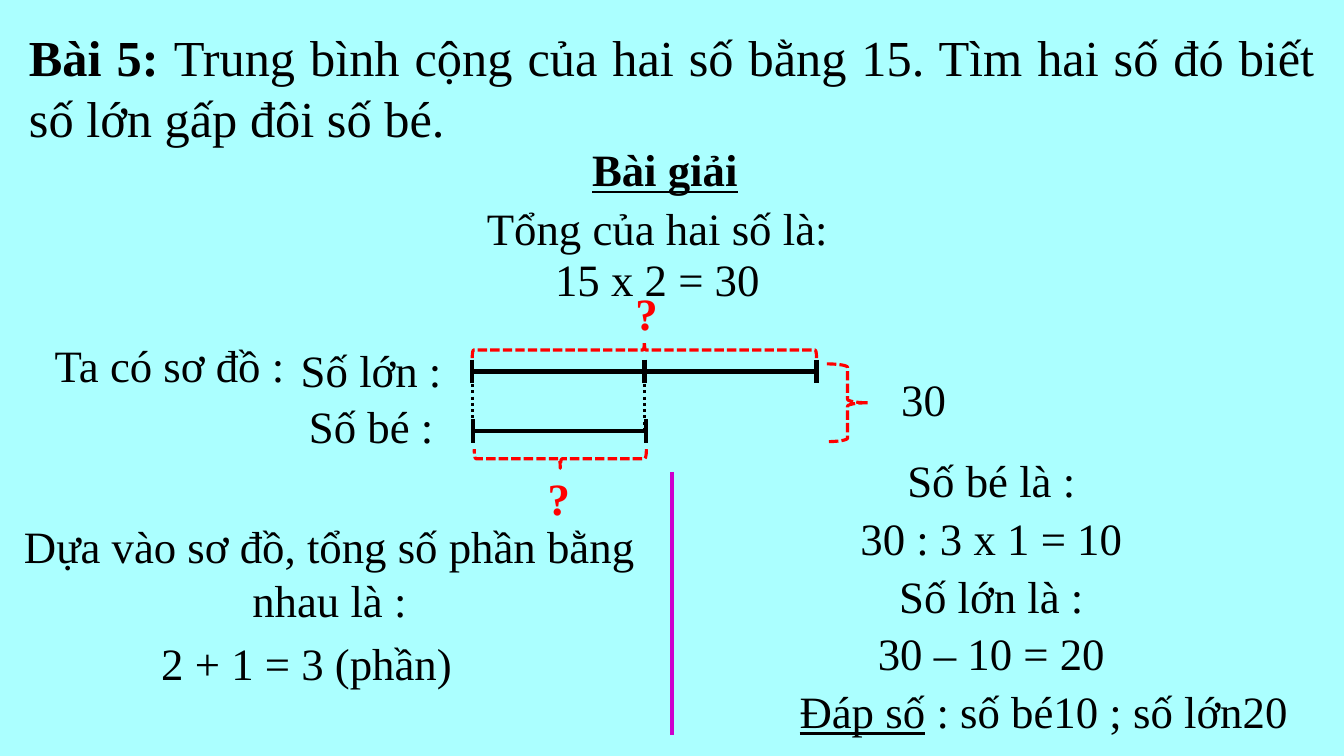
from lxml.etree import SubElement
from pptx import Presentation
from pptx.dml.color import RGBColor
from pptx.enum.dml import MSO_LINE_DASH_STYLE as Dash
from pptx.enum.shapes import MSO_CONNECTOR as Connector, MSO_SHAPE as Shape
from pptx.enum.text import MSO_ANCHOR as Anchor, PP_ALIGN as Align
from pptx.oxml.ns import qn
from pptx.util import Cm, Pt

COLORS = {"background": "ABFFFF", "ink": "000000", "unknown": "FF0000", "divider": "CC00CC"}
FONT = "Times New Roman"
ROW = 1.32
BOLD = {"bold": True}
UNDERLINED = {"underline": True}


def color(name):
    return RGBColor.from_string(COLORS[name])


def write(frame, pieces, size, ink, align, inset):
    side, edge = map(Cm, inset)
    layout = {"word_wrap": True, "vertical_anchor": Anchor.MIDDLE,
              "margin_left": side, "margin_right": side,
              "margin_top": edge, "margin_bottom": edge}
    for name, value in layout.items():
        setattr(frame, name, value)
    para = frame.paragraphs[0]
    para.alignment = align
    for words, extra in pieces:
        span = para.add_run()
        span.text = words
        span.font.color.rgb = color(ink)
        for name, value in {"name": FONT, "size": Pt(size), **extra}.items():
            setattr(span.font, name, value)


def add_heading(page, box, pieces, size, align):
    frame = page.shapes.add_textbox(*map(Cm, box)).text_frame
    write(frame, pieces, size, "ink", align, (0.25, 0.13))


def add_label(page, box, pieces, ink="ink"):
    label = page.shapes.add_shape(Shape.ROUNDED_RECTANGLE, *map(Cm, box))
    label.shadow.inherit = False
    label.fill.background()
    label.line.fill.background()
    write(label.text_frame, pieces, 32, ink, Align.CENTER, (0, 0))


def style_line(line, ink, width, dash=None):
    line.color.rgb = color(ink)
    for name, value in {"width": Pt(width), "dash_style": dash}.items():
        setattr(line, name, value)


def add_line(page, start, end, ink="ink", width=3, dash=None):
    line = page.shapes.add_connector(Connector.STRAIGHT, *map(Cm, (*start, *end)))
    style_line(line.line, ink, width, dash)
    SubElement(line._element.spPr, qn("a:effectLst"))


def add_brace(page, center, depth, length, rotation=0):
    x, y = center
    box = (x - depth / 2, y - length / 2, depth, length)
    brace = page.shapes.add_shape(Shape.RIGHT_BRACE, *map(Cm, box))
    brace.shadow.inherit = False
    brace.fill.background()
    brace.rotation = rotation
    style_line(brace.line, "unknown", 2.25, Dash.SQUARE_DOT)


def add_bar(page, left, y, part, count):
    ticks = [left + part * index for index in range(count + 1)]
    for start, end in zip(ticks, ticks[1:]):
        add_line(page, (start, y), (end, y))
    for x in ticks:
        add_line(page, (x, y - 0.3), (x, y + 0.3))


def add_problem(page, box):
    add_heading(page, box, [
        ("Bài 5: ", BOLD),
        ("Trung bình cộng của hai số bằng 15. Tìm hai số đó biết số lớn gấp đôi số bé.", {}),
    ], 36, Align.JUSTIFY)


def add_opening(page, box):
    left, top, width, height = box
    add_heading(page, (left + 7.5, top, 4.8, 2.16),
                [("Bài giải", {**BOLD, **UNDERLINED})], 32, Align.LEFT)
    for offset, words in ((1.9, "Tổng của hai số là:"), (3.17, "15 x 2 = 30")):
        add_label(page, (left, top + offset, width, ROW), [(words, {})])


def add_diagram(page, box):
    left, top, width, height = box
    bar_left, part = left + 11.23, 4.34
    large_y, small_y = top + 2.15, top + 3.66
    labels = ((0, 1.32, 7.21, "Ta có sơ đồ :"), (6.02, 1.44, 5.33, "Số lớn :"),
              (6.02, 2.85, 5.33, "Số bé :"), (21.46, 2.18, 2.29, "30"))
    for x, y, label_width, words in labels:
        add_label(page, (left + x, top + y, label_width, ROW), [(words, {})])

    add_bar(page, bar_left, large_y, part, 2)
    add_bar(page, bar_left + 0.03, small_y, part, 1)
    for x in (bar_left, bar_left + part):
        add_line(page, (x, large_y), (x, small_y), width=2.25, dash=Dash.ROUND_DOT)

    add_brace(page, (bar_left + part, top + 1.61), 0.41, part * 2, 270)
    add_brace(page, (bar_left + part / 2 + 0.05, top + 4.35), 0.48, part, 90)
    add_brace(page, (left + 20.69, top + 2.94), 1.04, 1.96)
    for x, y in ((14.48, 0), (12.27, 4.68)):
        add_label(page, (left + x, top + y, 2.29, ROW), [("?", BOLD)], "unknown")


def add_parts(page, box):
    left, top, width, height = box
    add_label(page, (left, top, width, 3), [("Dựa vào sơ đồ, tổng số phần bằng nhau là :", {})])
    add_label(page, (left + 2.17, top + 3.1, 10.36, ROW), [("2 + 1 = 3 (phần)", {})])


def add_answers(page, box):
    left, top, width, height = box
    step = (height - ROW) / 4
    steps = ("Số bé là :", "30 : 3 x 1 = 10", "Số lớn là :", "30 – 10 = 20")
    for index, words in enumerate(steps):
        add_label(page, (left, top + index * step, 11.51, ROW), [(words, {})])
    add_label(page, (left, top + 4 * step, width, ROW),
              [("Đáp số", UNDERLINED), (" : số bé10 ; số lớn20", {})])


def main():
    deck = Presentation()
    deck.slide_width, deck.slide_height = Cm(33.87), Cm(19.05)
    page = deck.slides.add_slide(deck.slide_layouts[6])
    page.background.fill.solid()
    page.background.fill.fore_color.rgb = color("background")
    add_problem(page, (0.48, 0.54, 32.92, 3.3))
    add_opening(page, (7.17, 3.18, 18.8, 4.49))
    add_diagram(page, (0.67, 7.21, 23.75, 6))
    add_parts(page, (0.38, 12.93, 15.85, 4.42))
    add_line(page, (16.94, 11.89), (16.94, 18.52), "divider")
    add_answers(page, (19.23, 11.43, 14.15, 7.14))
    deck.save("out.pptx")


if __name__ == "__main__":
    main()
